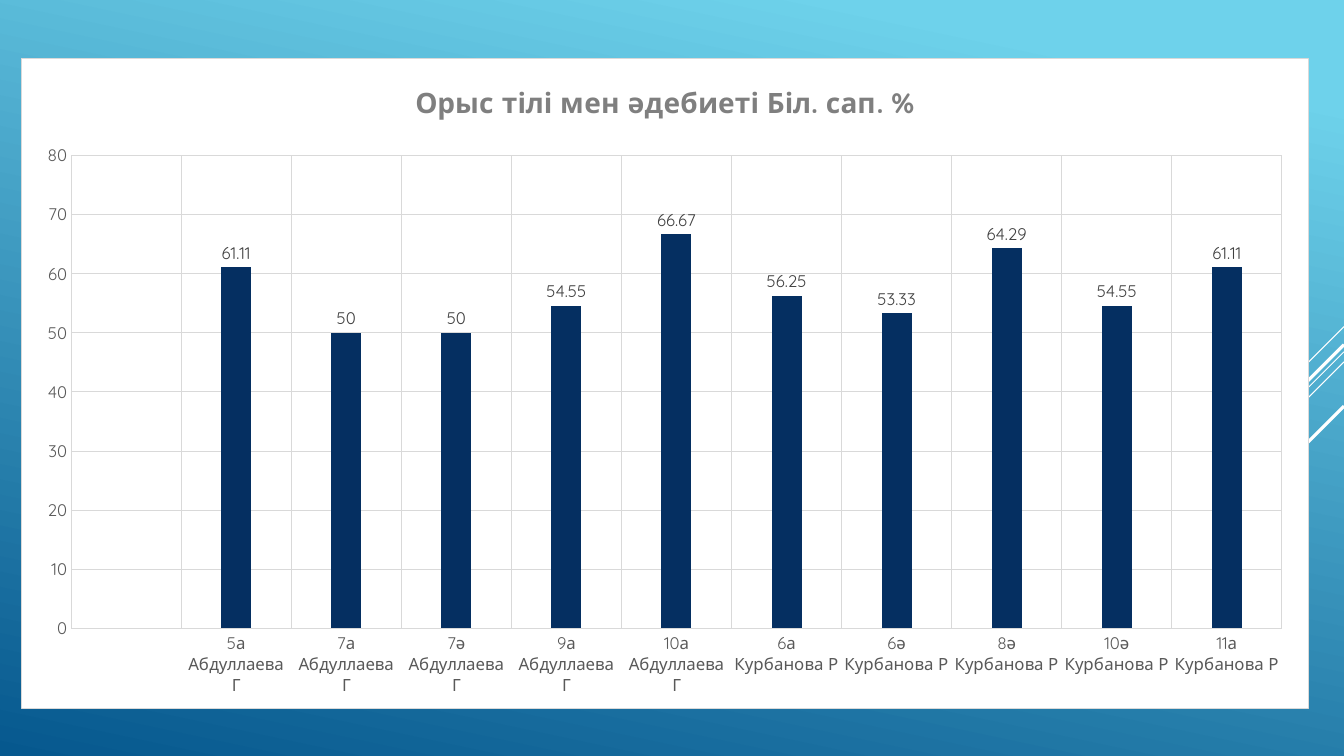
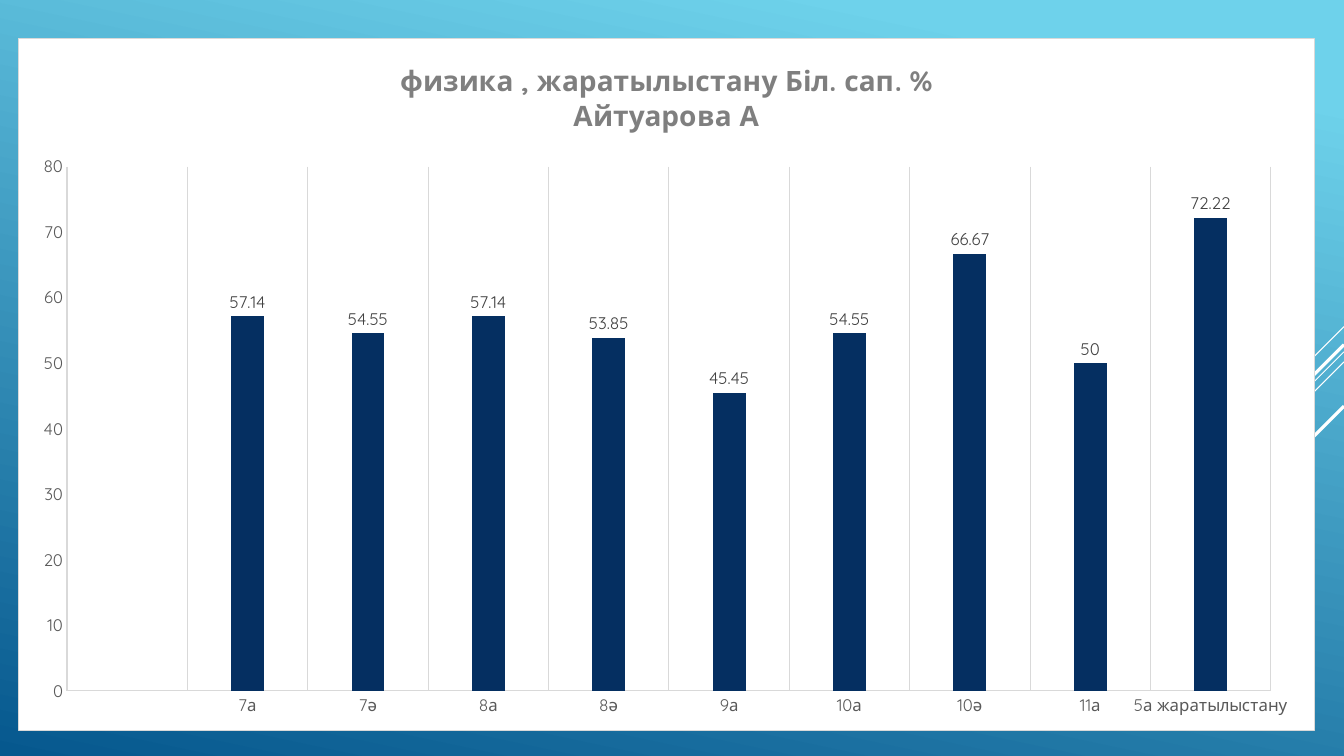
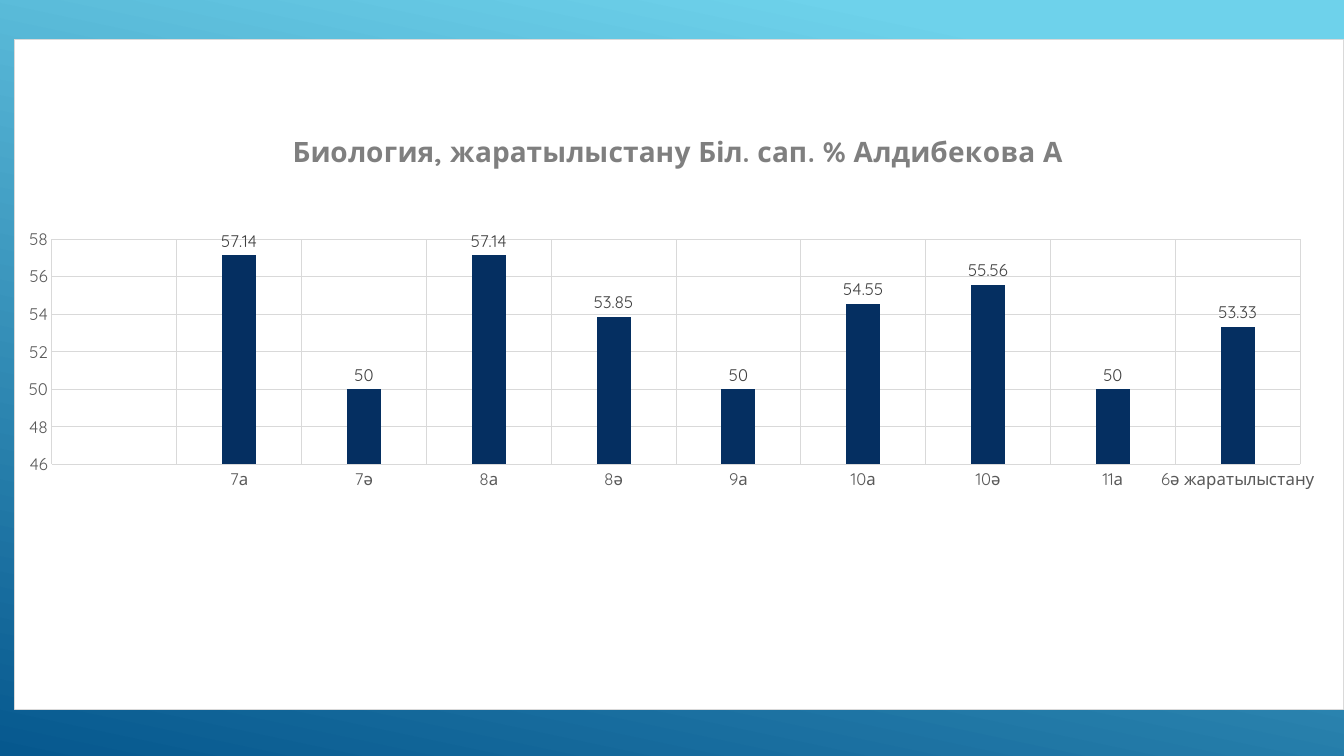
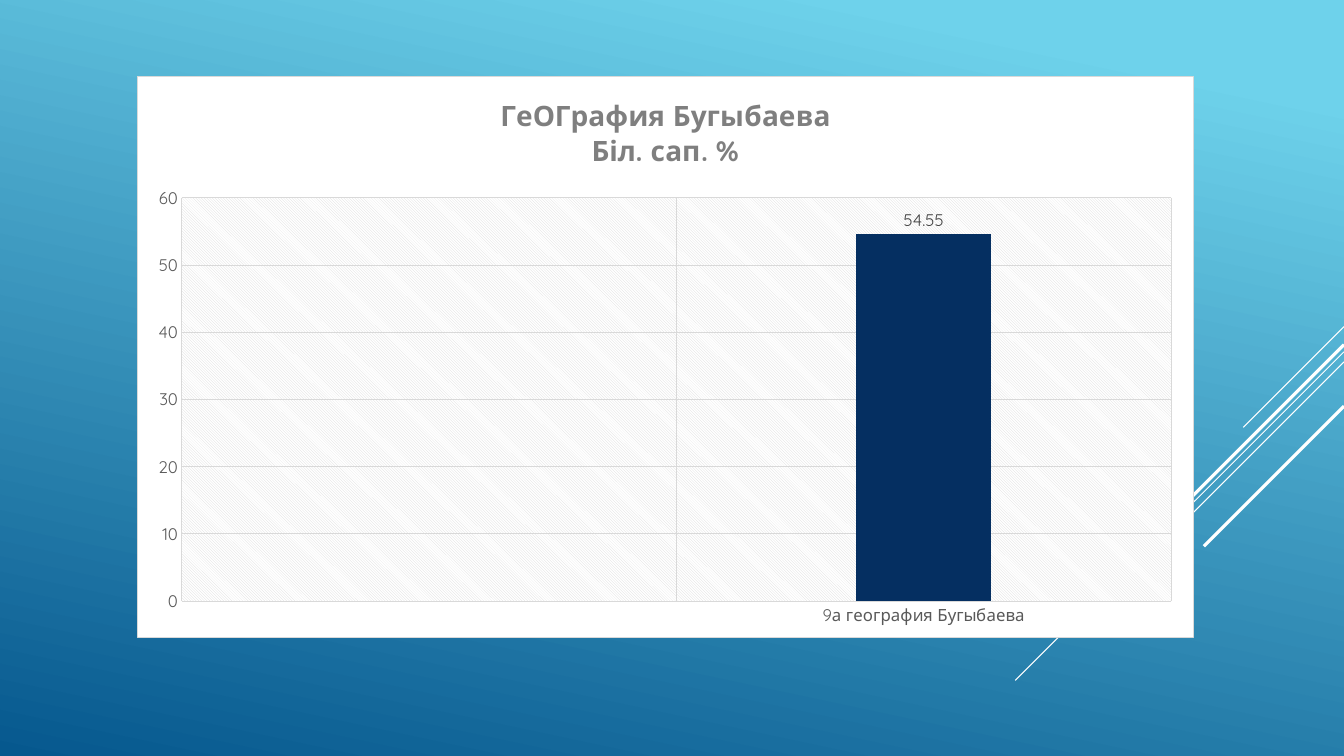
from dataclasses import dataclass
from typing import NamedTuple, Optional

from lxml import etree
from pptx import Presentation
from pptx.chart.data import CategoryChartData
from pptx.dml.color import RGBColor
from pptx.enum.chart import XL_CHART_TYPE, XL_LABEL_POSITION, XL_TICK_MARK
from pptx.enum.shapes import MSO_CONNECTOR
from pptx.oxml import parse_xml
from pptx.oxml.ns import nsdecls, qn
from pptx.util import Inches, Pt

COLUMN = XL_CHART_TYPE.COLUMN_CLUSTERED
OUTSIDE_END = XL_LABEL_POSITION.OUTSIDE_END
NO_TICK = XL_TICK_MARK.NONE
STRAIGHT = MSO_CONNECTOR.STRAIGHT

WHITE = RGBColor(0xFF, 0xFF, 0xFF)
SKY = RGBColor(0x6E, 0xD2, 0xEB)
DEEP_BLUE = RGBColor(0x06, 0x58, 0x8E)
NAVY = RGBColor(0x05, 0x2F, 0x61)
TITLE_GRAY = RGBColor(0x7F, 0x7F, 0x7F)
AXIS_GRAY = RGBColor(0x59, 0x59, 0x59)
LABEL_GRAY = RGBColor(0x40, 0x40, 0x40)
GRID_GRAY = RGBColor(0xD9, 0xD9, 0xD9)

FONT = "Quicksand"
TITLE_FONT = {"name": FONT, "size": Pt(20), "bold": True}
AXIS_FONT = {"name": FONT, "size": Pt(12), "bold": False}
SLIDE_W, SLIDE_H = 13.33, 7.5


class Box(NamedTuple):
    left: float
    top: float
    width: float
    height: float


class Stripe(NamedTuple):
    top: float
    length: float
    weight: float


@dataclass
class ResultChart:
    box: Box
    plot: Box
    title: list[str]
    results: dict[str, float]
    scale: tuple[int, int, int]
    title_at: Optional[tuple[float, float]] = None
    value_grid: bool = True
    hatched: bool = False


STRIPES = [
    Stripe(3.24, 1.0, 0.75),
    Stripe(3.49, 3.26, 0.75),
    Stripe(3.59, 2.07, 0.75),
    Stripe(3.42, 1.91, 2.25),
    Stripe(4.03, 1.39, 2.25),
]

CHARTS = [
    ResultChart(
        Box(0.21, 0.58, 12.77, 6.45),
        Box(0.7, 1.54, 12.02, 4.7),
        ["Орыс тілі мен әдебиеті Біл. сап. %"],
        {
            "5а Абдуллаева Г": 61.11,
            "7а Абдуллаева Г": 50,
            "7ә Абдуллаева Г": 50,
            "9а Абдуллаева Г": 54.55,
            "10а Абдуллаева Г": 66.67,
            "6а Курбанова Р": 56.25,
            "6ә Курбанова Р": 53.33,
            "8ә Курбанова Р": 64.29,
            "10ә Курбанова Р": 54.55,
            "11а Курбанова Р": 61.11,
        },
        (0, 80, 10),
    ),
    ResultChart(
        Box(0.18, 0.38, 12.86, 6.87),
        Box(0.66, 1.65, 11.95, 5.21),
        ["физика , жаратылыстану Біл. сап. %", "Айтуарова А"],
        {
            "7а": 57.14,
            "7ә": 54.55,
            "8а": 57.14,
            "8ә": 53.85,
            "9а": 45.45,
            "10а": 54.55,
            "10ә": 66.67,
            "11а": 50,
            "5а жаратылыстану": 72.22,
        },
        (0, 80, 10),
        value_grid=False,
    ),
    ResultChart(
        Box(0.14, 0.39, 13.19, 6.65),
        Box(0.51, 2.37, 12.39, 2.24),
        ["Биология, жаратылыстану Біл. сап. % Алдибекова А"],
        {
            "7а": 57.14,
            "7ә": 50,
            "8а": 57.14,
            "8ә": 53.85,
            "9а": 50,
            "10а": 54.55,
            "10ә": 55.56,
            "11а": 50,
            "6ә жаратылыстану": 53.33,
        },
        (46, 58, 2),
        title_at=(2.85, 1.24),
    ),
    ResultChart(
        Box(1.36, 0.75, 10.48, 5.58),
        Box(1.8, 1.96, 9.82, 4.01),
        ["ГеОГрафия Бугыбаева", "Біл. сап. %"],
        {"9а география Бугыбаева": 54.55},
        (0, 60, 10),
        hatched=True,
    ),
]


def set_font(font, values: dict, color: RGBColor) -> None:
    for name, value in values.items():
        setattr(font, name, value)
    font.color.rgb = color


def set_line(line, color: RGBColor, weight: float) -> None:
    line.color.rgb = color
    line.width = Pt(weight)


def set_background(prs) -> None:
    fill = prs.slide_master.background.fill
    fill.gradient()
    fill.gradient_angle = 258
    for stop, color, position in zip(fill.gradient_stops, (SKY, DEEP_BLUE), (0.1, 1.0)):
        stop.color.rgb = color
        stop.position = position


def add_stripes(s) -> None:
    for stripe in STRIPES:
        line = s.shapes.add_connector(
            STRAIGHT,
            Inches(SLIDE_W),
            Inches(stripe.top),
            Inches(SLIDE_W - stripe.length),
            Inches(stripe.top + stripe.length),
        )
        set_line(line.line, WHITE, stripe.weight)
        etree.SubElement(line.element.spPr, qn("a:effectLst"))


def set_layout(parent, index: int, values: dict) -> None:
    for old in parent.findall(qn("c:layout")):
        parent.remove(old)
    items = "".join(f'<c:{name} val="{value}"/>' for name, value in values.items())
    parent.insert(index, parse_xml(
        f'<c:layout {nsdecls("c")}><c:manualLayout>{items}</c:manualLayout></c:layout>'
    ))


def shape_properties(content: str):
    return parse_xml(f'<c:spPr {nsdecls("c", "a")}>{content}</c:spPr>')


def solid(color: RGBColor) -> str:
    return f'<a:solidFill><a:srgbClr val="{color}"/></a:solidFill>'


def style_areas(chart, spec: ResultChart) -> None:
    box, plot = spec.box, spec.plot
    root = chart.element.find(qn("c:chart"))
    root.addnext(shape_properties(
        f'{solid(WHITE)}<a:ln w="{Pt(0.75)}">{solid(GRID_GRAY)}</a:ln>'
    ))
    area = root.find(qn("c:plotArea"))
    set_layout(area, 0, {
        "layoutTarget": "inner",
        "xMode": "edge",
        "yMode": "edge",
        "x": (plot.left - box.left) / box.width,
        "y": (plot.top - box.top) / box.height,
        "w": plot.width / box.width,
        "h": plot.height / box.height,
    })
    if spec.hatched:
        area.append(shape_properties(
            '<a:pattFill prst="ltDnDiag">'
            f'<a:fgClr><a:srgbClr val="{GRID_GRAY}"/></a:fgClr>'
            f'<a:bgClr><a:srgbClr val="{WHITE}"/></a:bgClr></a:pattFill>'
        ))


def add_title(chart, spec: ResultChart) -> None:
    chart.has_title = True
    title = chart.chart_title
    title.include_in_layout = False
    tf = title.text_frame
    tf.text = "\n".join(spec.title)
    for p in tf.paragraphs:
        set_font(p.font, TITLE_FONT, TITLE_GRAY)
        for r in p.runs:
            set_font(r.font, TITLE_FONT, TITLE_GRAY)
    if spec.title_at:
        left, top = spec.title_at
        set_layout(title.element if hasattr(title, "element") else title._element, 1, {
            "xMode": "edge",
            "yMode": "edge",
            "x": (left - spec.box.left) / spec.box.width,
            "y": (top - spec.box.top) / spec.box.height,
        })


def style_axes(chart, spec: ResultChart) -> None:
    for axis, grid in ((chart.category_axis, True), (chart.value_axis, spec.value_grid)):
        axis.major_tick_mark = axis.minor_tick_mark = NO_TICK
        set_font(axis.tick_labels.font, AXIS_FONT, AXIS_GRAY)
        axis.has_major_gridlines = grid
        if grid:
            set_line(axis.major_gridlines.format.line, GRID_GRAY, 0.75)
    set_line(chart.category_axis.format.line, GRID_GRAY, 0.75)
    values = chart.value_axis
    values.format.line.fill.background()
    values.minimum_scale, values.maximum_scale, values.major_unit = spec.scale


def style_columns(chart) -> None:
    plot = chart.plots[0]
    plot.vary_by_categories = False
    plot.gap_width = 267
    plot.overlap = -43
    fill = plot.series[0].format.fill
    fill.solid()
    fill.fore_color.rgb = NAVY
    plot.has_data_labels = True
    labels = plot.data_labels
    labels.show_value = True
    labels.position = OUTSIDE_END
    set_font(labels.font, AXIS_FONT, LABEL_GRAY)


def add_result_chart(s, spec: ResultChart) -> None:
    data = CategoryChartData()
    data.categories = ["", *spec.results]
    data.add_series("Series 1", [None, *spec.results.values()])
    frame = s.shapes.add_chart(COLUMN, *map(Inches, spec.box), data)
    chart = frame.chart
    chart.has_legend = False
    chart.font.name = FONT
    chart.font.size = Pt(10)
    add_title(chart, spec)
    style_axes(chart, spec)
    style_columns(chart)
    style_areas(chart, spec)


def main() -> None:
    prs = Presentation()
    prs.slide_width = Inches(SLIDE_W)
    prs.slide_height = Inches(SLIDE_H)
    set_background(prs)
    for spec in CHARTS:
        s = prs.slides.add_slide(prs.slide_layouts[6])
        add_stripes(s)
        add_result_chart(s, spec)
    prs.save("out.pptx")


if __name__ == "__main__":
    main()
